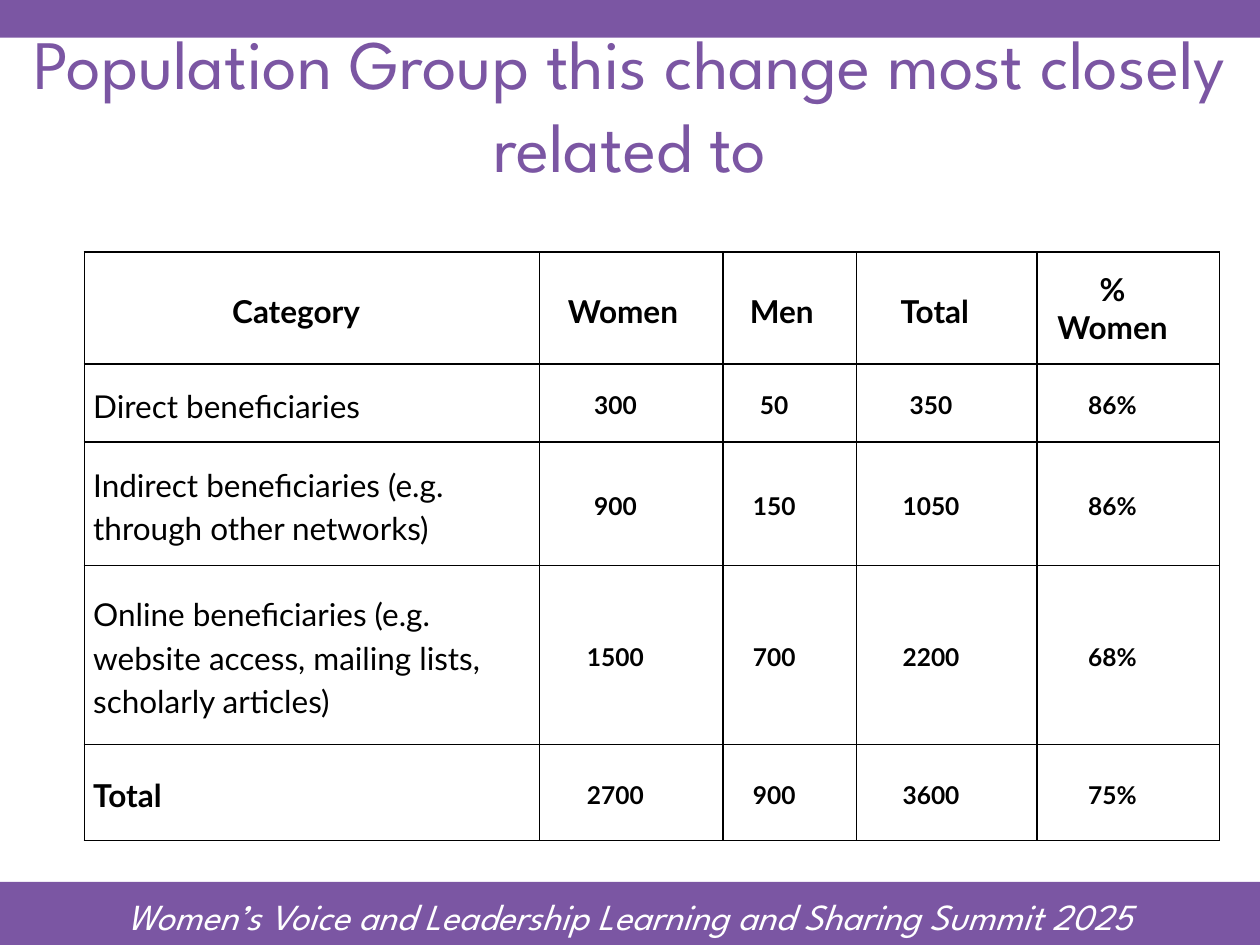
from pptx import Presentation
from pptx.dml.color import RGBColor
from pptx.enum.shapes import MSO_SHAPE
from pptx.enum.text import MSO_ANCHOR, MSO_AUTO_SIZE, PP_ALIGN
from pptx.oxml import parse_xml
from pptx.oxml.ns import nsdecls
from pptx.util import Inches, Pt

HUES = {"purple": "7B56A3", "white": "FFFFFF", "black": "000000"}
TITLE = {"name": "League Spartan", "size": Pt(39.6), "bold": False}
FOOT = {"name": "League Spartan", "size": Pt(21), "italic": True}
HEAD = {"name": "Lato", "size": Pt(18), "bold": True}
LABEL = {**HEAD, "bold": False}
VALUE = {**HEAD, "size": Pt(14)}

COLS = [3.61, 1.46, 1.06, 1.43, 1.45]
ROWS = [0.89, 0.62, 0.98, 1.42, 0.76]
DATA = [
    ["Category", "Women", "Men", "Total", "%\nWomen"],
    ["Direct beneficiaries", "300", "50", "350", "86%"],
    ["Indirect beneficiaries (e.g. through other networks)",
     "900", "150", "1050", "86%"],
    ["Online beneficiaries (e.g. website access, mailing lists, "
     "scholarly articles)", "1500", "700", "2200", "68%"],
    ["Total", "2700", "900", "3600", "75%"],
]
# Right insets that hold centred text left of the middle
HEAD_PADS = [0.32, 0.2, 0.2, 0.26, 0.32]
VALUE_PAD = 0.32
SIDE = 0.07


def set_text(frame, text, style, hue, align, space=1.0):
    frame.text = text
    frame.word_wrap = True
    for para in frame.paragraphs:
        para.alignment = align
        para.line_spacing = space
        for run in para.runs:
            for key, val in style.items():
                setattr(run.font, key, val)
            run.font.color.rgb = RGBColor.from_string(HUES[hue])


def add_bar(slide, top, height):
    bar = slide.shapes.add_shape(
        MSO_SHAPE.RECTANGLE, 0, Inches(top), Inches(10), Inches(height))
    bar.shadow.inherit = False
    bar.fill.solid()
    bar.fill.fore_color.rgb = RGBColor.from_string(HUES["purple"])
    bar.line.fill.background()


def add_title(slide, text):
    title = slide.shapes.title
    title.left, title.top = Inches(0), Inches(0.36)
    title.width, title.height = Inches(10), Inches(0.92)
    set_text(title.text_frame, text, TITLE, "purple", PP_ALIGN.CENTER)
    title.text_frame.auto_size = MSO_AUTO_SIZE.NONE
    title.text_frame.vertical_anchor = MSO_ANCHOR.MIDDLE


def add_foot(slide, text):
    box = slide.shapes.add_textbox(
        Inches(0.17), Inches(7.02), Inches(9.66), Inches(0.48))
    set_text(box.text_frame, text, FOOT, "white", PP_ALIGN.CENTER, 1.07)


def add_edges(cell):
    props = cell._tc.get_or_add_tcPr()
    for side in "LRTB":
        props.append(parse_xml(
            f'<a:ln{side} {nsdecls("a")} w="{Pt(1)}"><a:solidFill>'
            f'<a:srgbClr val="{HUES["black"]}"/></a:solidFill></a:ln{side}>'))


def fill_cell(cell, text, row, col):
    label = row > 0 and col == 0
    last = row == len(DATA) - 1
    if row == 0:
        style, pad = HEAD, HEAD_PADS[col]
    elif label:
        style, pad = (HEAD if last else LABEL), SIDE
    else:
        style, pad = VALUE, VALUE_PAD
    align = PP_ALIGN.LEFT if label else PP_ALIGN.CENTER
    space = 1.0 if "\n" in text else 1.15
    set_text(cell.text_frame, text, style, "black", align, space)
    form = {"margin_left": Inches(SIDE), "margin_right": Inches(pad),
            "margin_top": 0, "margin_bottom": 0,
            "vertical_anchor": MSO_ANCHOR.MIDDLE}
    for key, val in form.items():
        setattr(cell, key, val)
    add_edges(cell)
    cell.fill.background()


def add_grid(slide):
    grid = slide.shapes.add_table(
        len(ROWS), len(COLS), Inches(0.67), Inches(2),
        Inches(sum(COLS)), Inches(sum(ROWS))).table
    grid.first_row = grid.horz_banding = False
    for col, width in zip(grid.columns, COLS):
        col.width = Inches(width)
    for row, height in zip(grid.rows, ROWS):
        row.height = Inches(height)
    for r, line in enumerate(DATA):
        for c, text in enumerate(line):
            fill_cell(grid.cell(r, c), text, r, c)


def main():
    deck = Presentation()
    deck.slide_width, deck.slide_height = Inches(10), Inches(7.5)
    slide = deck.slides.add_slide(deck.slide_layouts[5])
    # Bands at the top and bottom
    add_bar(slide, 7, 0.5)
    add_bar(slide, 0, 0.3)
    add_foot(slide,
             "Women’s Voice and Leadership Learning and Sharing Summit 2025")
    # Title and table
    add_title(slide, "Population Group this change most closely related to")
    add_grid(slide)
    deck.save("out.pptx")


if __name__ == "__main__":
    main()
